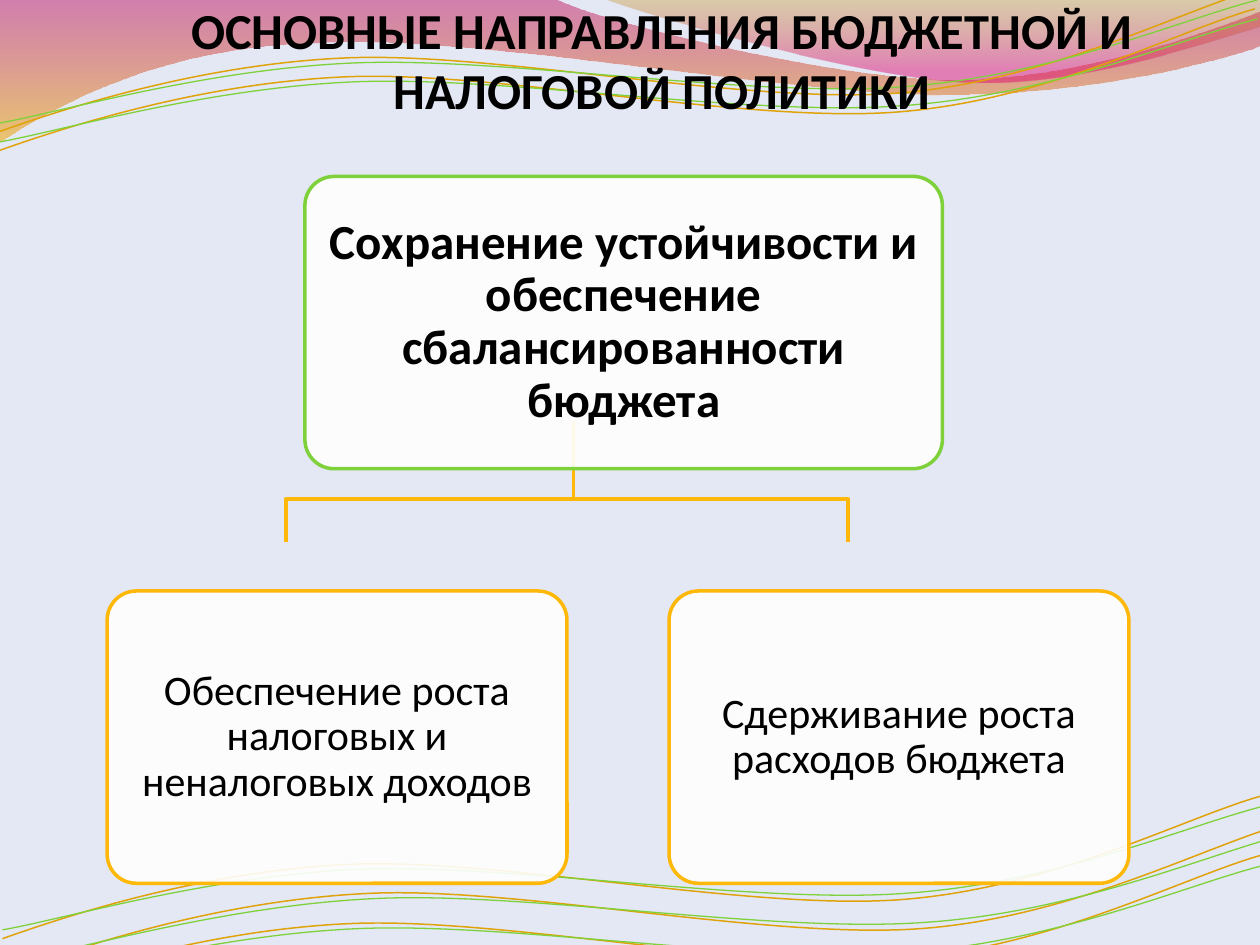
import math

from lxml import etree
from pptx import Presentation
from pptx.dml.color import RGBColor
from pptx.enum import shapes, text
from pptx.oxml.ns import qn
from pptx.util import Inches, Pt

COLORS = {"bg": "E3E8F4", "orange": "E0A209", "green": "7FD13B", "amber": "FEB80A",
          "white": "FFFFFF", "black": "000000", "crimson": "BD0059", "gold": "F0AB00",
          "ochre": "C38B00", "pink": "E1006B"}
FONT = "Calibri"
WAVE_TILT = 2.7  # degrees, counter-clockwise

# Outlines: start, then segments of one point (line) or three points (curve)
SWOOSHES = [
    ((-0.01, -0.01, 10.02, 1.14),
     [[(0, 0)], [(4.4, -0.01)],
      [(4.76, 0.17), (6.64, 0.63), (7.58, 0.63)],
      [(8.53, 0.63), (9.58, 0.26), (10, 0.09)], [(10.01, 0.36)],
      [(9.83, 0.44), (8.7, 0.76), (7.46, 0.75)],
      [(6.22, 0.75), (3.82, 0.28), (2.57, 0.34)],
      [(1.29, 0.36), (0.46, 0.83), (-0.01, 1.13)], [(0, 0)]],
     [(0, "crimson", 45), (1, "gold", 55)]),
    ((4.79, -0.01, 5.21, 0.7),
     [[(4.79, -0.01)],
      [(5.09, 0.11), (6.82, 0.62), (7.69, 0.65)],
      [(8.56, 0.69), (9.61, 0.32), (10, 0.21)], [(10, 0)], [(4.79, -0.01)]],
     [(0, "ochre", 30), (0.8, "pink", 45)]),
]

# One pair of waves, repeated at each offset
WAVES = [
    ((0, 6.56, 10.02, 0.71),
     [[(0.02, 7.45)],
      [(0.5, 7.28), (1.6, 6.91), (2.79, 6.86)],
      [(3.97, 6.81), (5.95, 7.23), (7.15, 7.14)],
      [(8.35, 7.05), (9.4, 6.49), (10, 6.32)]], "orange", 0.85),
    ((0.01, 6.64, 10.03, 0.58),
     [[(0.02, 7.38)],
      [(0.49, 7.3), (1.66, 6.95), (2.85, 6.9)],
      [(4.05, 6.85), (5.99, 7.18), (7.19, 7.09)],
      [(8.38, 7.01), (9.43, 6.55), (10.02, 6.4)]], "green", 0.75),
]
WAVE_OFFSETS = [(0, 0), (-0.04, -6.4), (0.16, 0.23), (0, 0.47), (-0.04, -6.25)]


def rgb(name):
    return RGBColor.from_string(COLORS[name])


def set_alpha(color_el, percent):
    etree.SubElement(color_el, qn("a:alpha")).set("val", str(percent * 1000))


def add_outline(s, box, segments, close=False):
    """Add a freeform filling the box, with true cubic curves."""
    left, top, width, height = map(Inches, box)
    builder = s.shapes.build_freeform(left, top, scale=1.0)
    builder.add_line_segments([(left + width, top + height)], close=False)
    sp = builder.convert_to_shape()
    sp.shadow.inherit = False
    outline = next(sp._element.iter(qn("a:path")))
    for child in list(outline):
        outline.remove(child)
    for i, seg in enumerate(segments):
        tag = "a:moveTo" if i == 0 else "a:lnTo" if len(seg) == 1 else "a:cubicBezTo"
        command = etree.SubElement(outline, qn(tag))
        for x, y in seg:
            pt = etree.SubElement(command, qn("a:pt"))
            pt.set("x", str(Inches(x) - left))
            pt.set("y", str(Inches(y) - top))
    if close:
        etree.SubElement(outline, qn("a:close"))
    return sp


def style_stroke(sp, color, width):
    sp.fill.background()
    sp.line.color.rgb = rgb(color)
    sp.line.width = Pt(width)


def add_swoosh(s, box, segments, stops):
    sp = add_outline(s, box, segments, close=True)
    sp.line.fill.background()
    sp.fill.gradient()
    sp.fill.gradient_angle = 270
    for stop, (position, color, _) in zip(sp.fill.gradient_stops, stops):
        stop.position = position
        stop.color.rgb = rgb(color)
    for el, (_, _, alpha) in zip(sp._element.iter(qn("a:srgbClr")), stops):
        set_alpha(el, alpha)


def add_wave(s, box, segments, color, width):
    """Level the tilted wave inside its box, then rotate the shape."""
    cx, cy = box[0] + box[2] / 2, box[1] + box[3] / 2
    cos, sin = math.cos(math.radians(WAVE_TILT)), math.sin(math.radians(WAVE_TILT))
    level = [[(cx + (x - cx) * cos - (y - cy) * sin,
               cy + (x - cx) * sin + (y - cy) * cos) for x, y in seg]
             for seg in segments]
    sp = add_outline(s, box, level)
    sp.rotation = -WAVE_TILT
    style_stroke(sp, color, width)


def add_backdrop(s):
    s.background.fill.solid()
    s.background.fill.fore_color.rgb = rgb("bg")
    for box, segments, stops in SWOOSHES:
        add_swoosh(s, box, segments, stops)
    for dx, dy in WAVE_OFFSETS:
        for (left, top, width, height), segments, color, weight in WAVES:
            moved = [[(x + dx, y + dy) for x, y in seg] for seg in segments]
            add_wave(s, (left + dx, top + dy, width, height), moved, color, weight)


def write_text(tf, content, size, bold, anchor):
    tf.word_wrap = True
    tf.auto_size = text.MSO_AUTO_SIZE.NONE
    tf.vertical_anchor = anchor
    p = tf.paragraphs[0]
    p.text = content
    p.alignment = text.PP_ALIGN.CENTER
    p.font.name = FONT
    p.font.size = Pt(size)
    p.font.bold = bold
    p.font.color.rgb = rgb("black")
    return p


def add_title(s, box, content):
    title = s.shapes.title
    title.left, title.top, title.width, title.height = map(Inches, box)
    tf = title.text_frame
    tf.margin_left = tf.margin_right = tf.margin_bottom = 0
    tf.margin_top = Inches(0.05)
    write_text(tf, content, 28.8, True, text.MSO_ANCHOR.BOTTOM)
    s.shapes._spTree.append(title._element)  # bring in front of the backdrop


def add_card(s, box, content, color, size, bold, margin):
    sp = s.shapes.add_shape(shapes.MSO_SHAPE.ROUNDED_RECTANGLE, *map(Inches, box))
    sp.adjustments[0] = 0.1
    sp.shadow.inherit = False
    sp.fill.solid()
    sp.fill.fore_color.rgb = rgb("white")
    set_alpha(sp._element.spPr.find(qn("a:solidFill"))[0], 90)
    sp.line.color.rgb = rgb(color)
    sp.line.width = Pt(2)
    tf = sp.text_frame
    tf.margin_left = tf.margin_right = tf.margin_top = tf.margin_bottom = Inches(margin)
    write_text(tf, content, size, bold, text.MSO_ANCHOR.MIDDLE).line_spacing = 0.9


def add_tree(s, box, root, children):
    left, top, width, height = box
    card_h, child_w, root_w = 2.32, 3.65, 5.06
    # Branches, right one first
    trunk, start, bend, tip = left + 3.7, top + 1.94, top + 2.56, top + 2.9
    for end in (left + 5.88, left + 1.42):
        branch = [[(trunk, start)], [(trunk, bend)], [(end, bend)], [(end, tip)]]
        sp = add_outline(s, (min(trunk, end), start, abs(end - trunk), tip - start), branch)
        style_stroke(sp, "amber", 2)
    # Cards
    add_card(s, (left + 1.57, top, root_w, card_h), root, "green", 28, True, 0.12)
    step = (width - child_w) / (len(children) - 1)
    for i, child in enumerate(children):
        add_card(s, (left + i * step, top + height - card_h, child_w, card_h),
                 child, "amber", 24, False, 0.1)


def main():
    prs = Presentation()
    prs.slide_width, prs.slide_height = Inches(10), Inches(7.5)
    s = prs.slides.add_slide(prs.slide_layouts[5])
    add_backdrop(s)
    add_title(s, (0.51, 0, 9.49, 0.95),
              "ОСНОВНЫЕ НАПРАВЛЕНИЯ БЮДЖЕТНОЙ И НАЛОГОВОЙ ПОЛИТИКИ")
    add_tree(s, (0.85, 1.4, 8.11, 5.61),
             "Сохранение устойчивости и обеспечение сбалансированности бюджета",
             ["Обеспечение роста налоговых и неналоговых доходов",
              "Сдерживание роста расходов бюджета"])
    prs.save("out.pptx")


if __name__ == "__main__":
    main()
